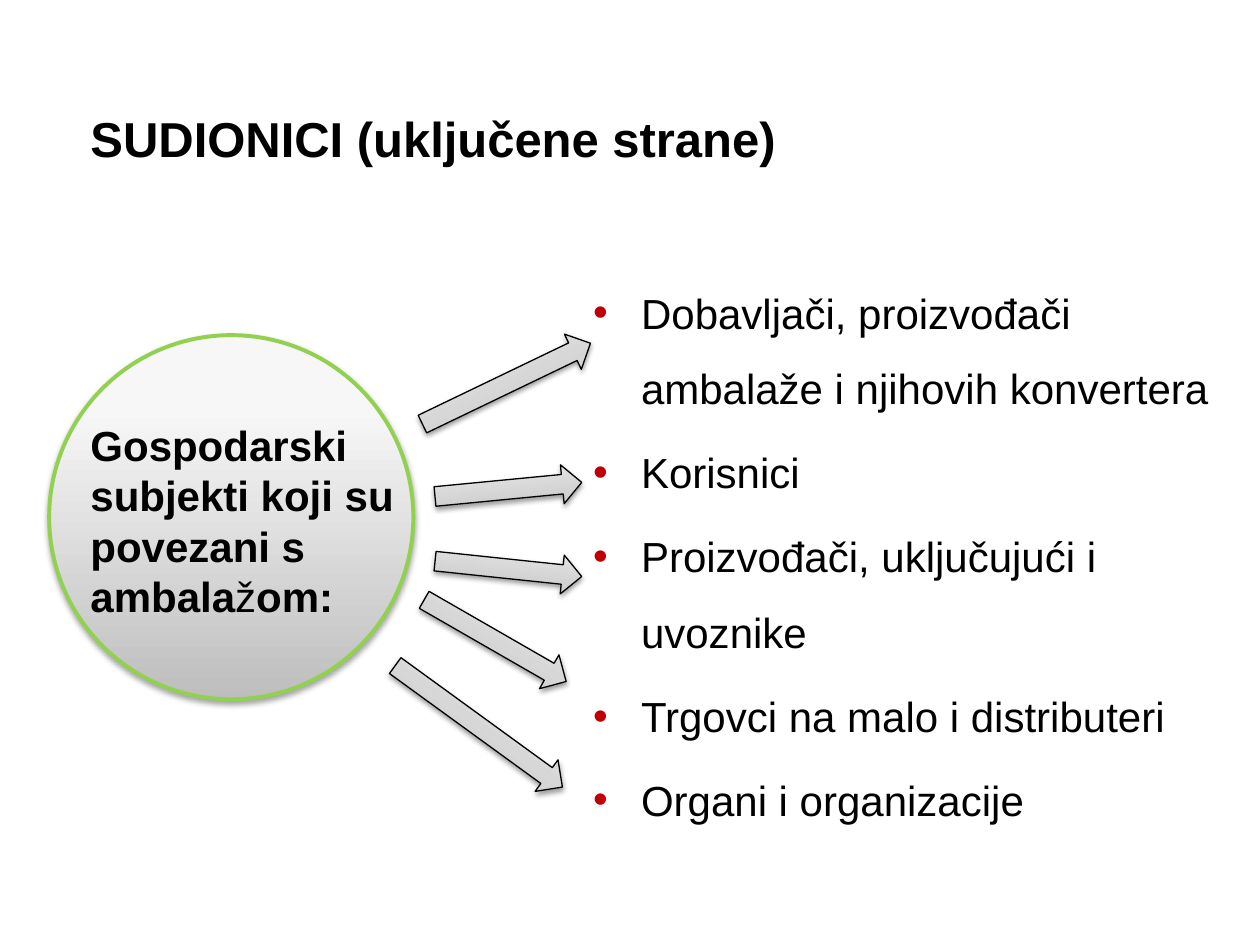
from lxml.etree import SubElement as Sub
from pptx import Presentation
from pptx.dml.color import RGBColor
from pptx.enum.shapes import MSO_SHAPE as Shape
from pptx.enum.text import MSO_ANCHOR as Anchor
from pptx.oxml import parse_xml
from pptx.oxml.ns import nsdecls, qn
from pptx.util import Inches, Pt

ITEMS = [
    "Dobavljači, proizvođači ambalaže i njihovih konvertera",
    "Korisnici",
    "Proizvođači, uključujući i uvoznike",
    "Trgovci na malo i distributeri",
    "Organi i organizacije",
]
ARROWS = [
    (3.06, 1.07, 1.17, 354.5),
    (2.89, 0.23, 1.48, 334.3),
    (2.89, 2.27, 1.3, 29.9),
    (2.59, 2.95, 1.64, 36),
    (3.06, 1.7, 1.17, 6),
]
ARROW_FILL = [(0, "BDBDBD"), (35, "D1D1D1"), (100, "EEEEEE")]
DISC_FILL = [(0, "BEBEBE"), (80, "F7F7F7"), (100, "F8F8F8")]


def color(code):
    """Turn a hex string into a colour."""
    return RGBColor.from_string(code)


def add_run(para, text, size, bold=False):
    """Add one black Arial run to a paragraph."""
    run = para.add_run()
    run.text = text
    font = run.font
    font.name, font.size, font.bold = "Arial", Pt(size), bold
    font.color.rgb = color("000000")


def add_box(slide, x, y, w, h, anchor=Anchor.TOP):
    """Add a wrapping text box and return its frame."""
    frame = slide.shapes.add_textbox(Inches(x), Inches(y), Inches(w), Inches(h)).text_frame
    frame.word_wrap = True
    frame.vertical_anchor = anchor
    return frame


def add_bullet(para):
    """Give a paragraph a red bullet and a hanging indent."""
    props = para._p.get_or_add_pPr()
    props.set("marL", str(Inches(0.38)))
    props.set("indent", str(-Inches(0.38)))
    tint = Sub(props, qn("a:buClr"))
    Sub(tint, qn("a:srgbClr"), val="C00000")
    Sub(props, qn("a:buFont"), typeface="Arial")
    Sub(props, qn("a:buChar"), char="•")


def add_solid(slide, kind, box, stops, edge, width, alpha, drop):
    """Add a shape with an upward gradient, an outline and a soft shadow."""
    shape = slide.shapes.add_shape(kind, *map(Inches, box))
    marks = "".join(
        f'<a:gs pos="{pos * 1000}"><a:srgbClr val="{code}"/></a:gs>' for pos, code in stops
    )
    props = shape._element.spPr
    props.insert(2, parse_xml(
        f'<a:gradFill {nsdecls("a")} rotWithShape="1"><a:gsLst>{marks}</a:gsLst>'
        '<a:lin ang="16200000" scaled="0"/></a:gradFill>'
    ))
    shape.line.color.rgb = color(edge)
    shape.line.width = Pt(width)
    shape.shadow.inherit = False
    props.find(qn("a:effectLst")).append(parse_xml(
        f'<a:outerShdw {nsdecls("a")} blurRad="{Pt(3.1)}" dist="{Pt(drop)}" dir="5400000" '
        f'rotWithShape="0"><a:srgbClr val="000000"><a:alpha val="{alpha * 1000}"/>'
        '</a:srgbClr></a:outerShdw>'
    ))
    return shape


def add_title(slide, x, y, w, h):
    """Write the heading."""
    frame = add_box(slide, x, y, w, h, Anchor.MIDDLE)
    add_run(frame.paragraphs[0], "SUDIONICI (uključene strane)", 28, True)


def add_list(slide, x, y, w, h):
    """Write the bulleted list of parties."""
    frame = add_box(slide, x, y, w, h)
    for i, item in enumerate(ITEMS):
        para = frame.add_paragraph() if i else frame.paragraphs[0]
        para.line_spacing = 1.5
        para.space_before = Pt(4.8 if i else 0)
        add_bullet(para)
        add_run(para, item, 24)


def add_hub(slide, x, y, size):
    """Draw the arrows, the disc they leave and its label."""
    for dx, dy, length, turn in ARROWS:
        box = (x + dx, y + dy, length, 0.31)
        arrow = add_solid(slide, Shape.RIGHT_ARROW, box, ARROW_FILL, "000000", 0.75, 38, 1.6)
        arrow.rotation = turn
    add_solid(slide, Shape.OVAL, (x, y, size, size), DISC_FILL, "92D050", 2.25, 35, 1.8)
    para = add_box(slide, x + 0.23, y + 0.62, size - 0.23, 1.72).paragraphs[0]
    add_run(para, "Gospodarski subjekti koji su povezani s ambala", 24, True)
    add_run(para, "ž", 24)
    add_run(para, "om:", 24, True)


def main():
    """Build and save the slide."""
    deck = Presentation()
    deck.slide_width, deck.slide_height = Inches(10), Inches(7.5)
    slide = deck.slides.add_slide(deck.slide_layouts[6])
    add_title(slide, 0.62, 0.47, 7.34, 1.25)
    add_list(slide, 4.61, 2.03, 5.23, 4.69)
    add_hub(slide, 0.39, 2.66, 2.89)
    deck.save("out.pptx")


if __name__ == "__main__":
    main()
